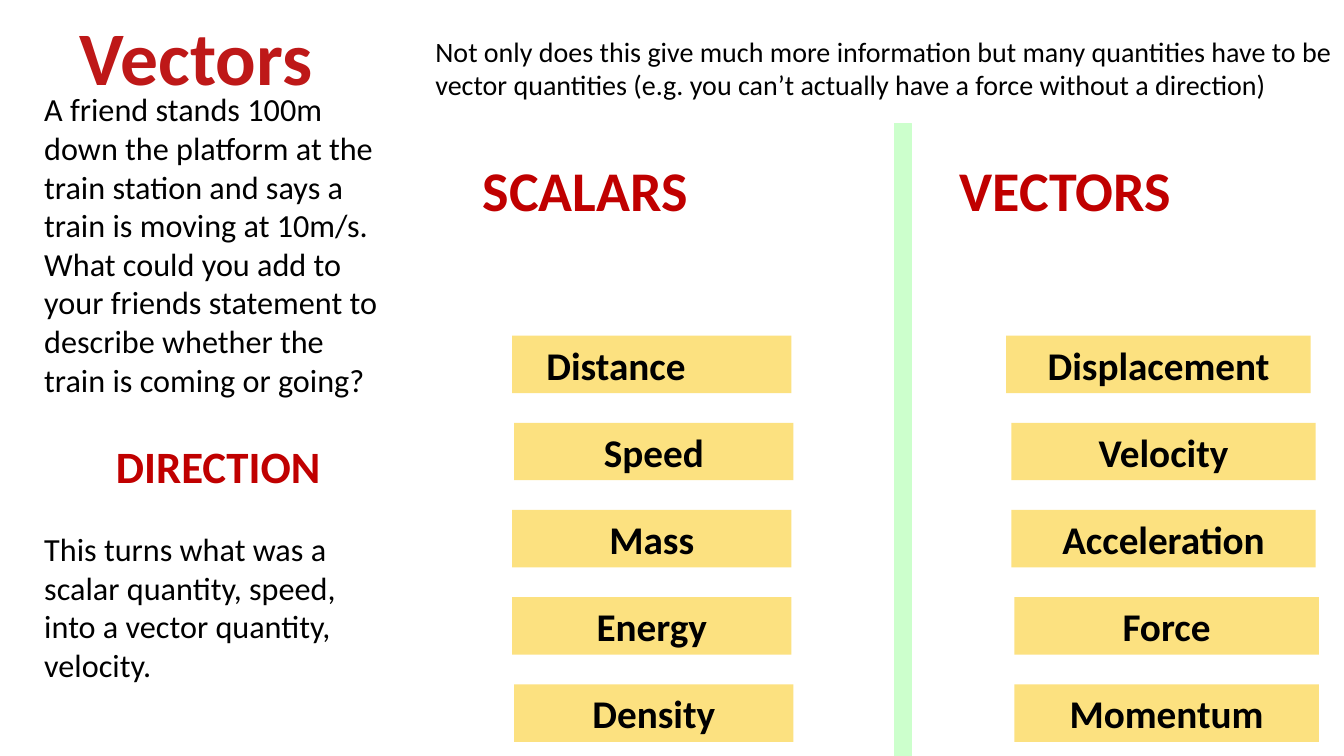
from dataclasses import dataclass

from pptx import Presentation
from pptx.dml.color import RGBColor
from pptx.enum.shapes import MSO_SHAPE
from pptx.enum.text import MSO_ANCHOR, MSO_AUTO_SIZE, PP_ALIGN
from pptx.util import Inches, Pt

RECTANGLE = MSO_SHAPE.RECTANGLE
LEFT, CENTER = PP_ALIGN.LEFT, PP_ALIGN.CENTER
MIDDLE = MSO_ANCHOR.MIDDLE
NO_FIT, GROW = MSO_AUTO_SIZE.NONE, MSO_AUTO_SIZE.SHAPE_TO_FIT_TEXT

FONT = "Calibri"
BLACK, RED, TITLE_RED = "000000", "C00000", "BE1818"
YELLOW, GREEN = "FCE180", "CCFFCC"
FIRST_CARD_TOP, CARD_STEP, CARD_HEIGHT = 3.33, 0.865, 0.57


@dataclass(frozen=True)
class Line:
    text: str
    size: float
    color: str = BLACK
    bold: bool = False
    align: PP_ALIGN = LEFT
    before: float = 0


@dataclass(frozen=True)
class Passage:
    left: float
    top: float
    width: float
    height: float
    lines: tuple[Line, ...]
    wrap: bool = True


@dataclass(frozen=True)
class Quantity:
    name: str
    left: float
    right_inset: float = 0.1


@dataclass(frozen=True)
class Column:
    heading: str
    heading_left: float
    heading_width: float
    card_width: float
    quantities: tuple[Quantity, ...]


PASSAGES = (
    Passage(0.29, 0.05, 3.31, 1, (Line("Vectors", 54, TITLE_RED, True, CENTER),)),
    Passage(0.34, 0.84, 3.65, 6.06, (
        Line("A friend stands 100m down the platform at the train station and says "
             "a train is moving at 10m/s. What could you add to your friends "
             "statement to describe whether the train is coming or going?", 23),
        Line("DIRECTION", 32, RED, True, CENTER, before=29),
        Line("This turns what was a scalar quantity, speed, into a vector quantity, "
             "velocity.", 23, before=26),
    )),
    Passage(4.22, 0.29, 9.17, 0.77, (
        Line("Not only does this give much more information but many quantities have "
             "to be vector quantities (e.g. you can’t actually have a force without "
             "a direction)", 20),
    )),
)

COLUMNS = (
    Column("SCALARS", 4.69, 3.67, 2.77, (
        Quantity("Distance", 5.08, right_inset=0.81),
        Quantity("Speed", 5.1),
        Quantity("Mass", 5.08),
        Quantity("Energy", 5.08),
        Quantity("Density", 5.1),
    )),
    Column("VECTORS", 9.42, 3.75, 3.02, (
        Quantity("Displacement", 9.98),
        Quantity("Velocity", 10.03),
        Quantity("Acceleration", 10.03),
        Quantity("Force", 10.06),
        Quantity("Momentum", 10.06),
    )),
)


def rgb(value: str) -> RGBColor:
    return RGBColor.from_string(value)


def write_lines(frame, lines: tuple[Line, ...]) -> None:
    for index, line in enumerate(lines):
        paragraph = frame.add_paragraph() if index else frame.paragraphs[0]
        paragraph.alignment = line.align
        paragraph.space_before = Pt(line.before)
        run = paragraph.add_run()
        run.text = line.text
        run.font.name = FONT
        run.font.size = Pt(line.size)
        run.font.bold = line.bold
        run.font.color.rgb = rgb(line.color)


def draw_passage(slide, passage: Passage) -> None:
    box = slide.shapes.add_textbox(Inches(passage.left), Inches(passage.top),
                                   Inches(passage.width), Inches(passage.height))
    frame = box.text_frame
    frame.word_wrap = passage.wrap
    frame.auto_size = GROW if passage.wrap else NO_FIT
    write_lines(frame, passage.lines)


def draw_bar(slide, left: float, top: float, width: float, height: float, fill: str):
    bar = slide.shapes.add_shape(RECTANGLE, Inches(left), Inches(top),
                                 Inches(width), Inches(height))
    bar.shadow.inherit = False
    bar.fill.solid()
    bar.fill.fore_color.rgb = rgb(fill)
    bar.line.fill.background()
    return bar


def draw_column(slide, column: Column) -> None:
    heading = Line(column.heading, 40, RED, True)
    draw_passage(slide, Passage(column.heading_left, 1.49, column.heading_width, 1.33,
                                (heading,), wrap=False))
    for row, quantity in enumerate(column.quantities):
        card = draw_bar(slide, quantity.left, FIRST_CARD_TOP + row * CARD_STEP,
                        column.card_width, CARD_HEIGHT, YELLOW)
        frame = card.text_frame
        frame.word_wrap = True
        frame.auto_size = GROW
        frame.vertical_anchor = MIDDLE
        frame.margin_right = Inches(quantity.right_inset)
        write_lines(frame, (Line(quantity.name, 28, BLACK, True, CENTER),))


def main() -> None:
    deck = Presentation()
    deck.slide_width, deck.slide_height = Inches(13.33), Inches(7.5)
    slide = deck.slides.add_slide(deck.slide_layouts[6])
    for column in COLUMNS:
        draw_column(slide, column)
    divider = draw_bar(slide, 8.87, 1.23, 0.17, 7.5, GREEN)
    divider.line.color.rgb = rgb(GREEN)
    divider.line.width = Pt(0.75)
    for passage in PASSAGES:
        draw_passage(slide, passage)
    deck.save("out.pptx")


if __name__ == "__main__":
    main()
